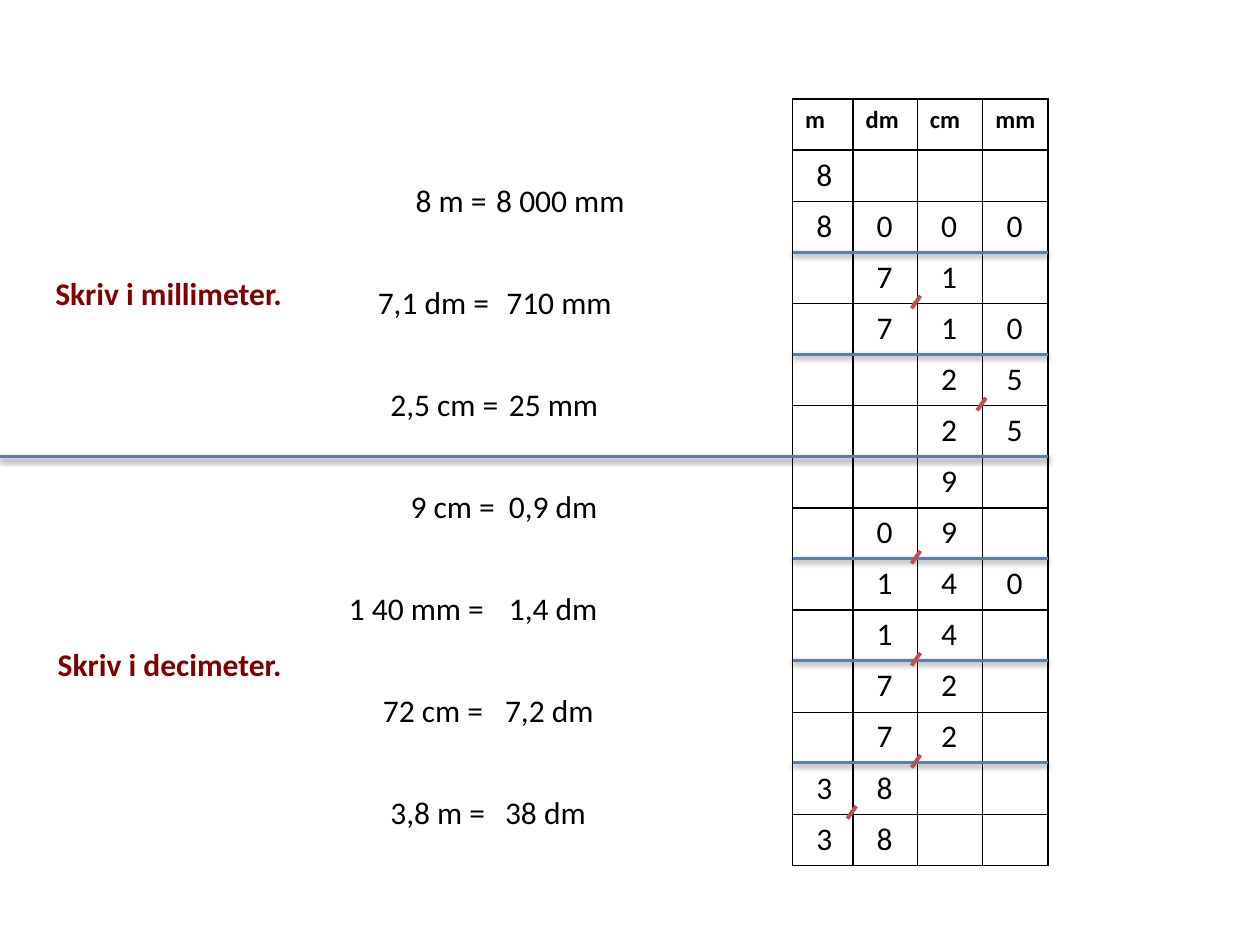
"""Build a slide on converting lengths between metres, decimetres, centimetres and millimetres."""
from dataclasses import dataclass
from itertools import accumulate

import lxml.etree
import pptx
import pptx.dml.color
import pptx.enum.shapes
import pptx.enum.text
import pptx.oxml
import pptx.oxml.ns
import pptx.util

SLIDE_WIDTH, SLIDE_HEIGHT = 10, 7.5
FONT = "Calibri"
COLORS = {"text": "000000", "label": "800000", "rule": "4F81BD", "comma": "C0504D", "paper": "FFFFFF"}

TABLE_LEFT, TABLE_TOP, ROW_HEIGHT = 0.629 * SLIDE_WIDTH, 0.105 * SLIDE_HEIGHT, 0.054 * SLIDE_HEIGHT
COLUMN_WIDTHS = [0.48, 0.51, 0.52, 0.52]
COLUMN_EDGES = list(accumulate(COLUMN_WIDTHS, initial=TABLE_LEFT))
UNITS = ["m", "dm", "cm", "mm"]
DIGIT_ROWS = [
    "8   ", "8000", " 71 ", " 710", "  25", "  25", "  9 ",
    " 09 ", " 140", " 14 ", " 72 ", " 72 ", "38  ", "38  ",
]
ROW_COUNT = len(DIGIT_ROWS) + 1
RULE_ROWS = range(3, ROW_COUNT, 2)
SECTION_ROW = 7
COMMA_CELLS = [(4, 2), (6, 3), (9, 2), (11, 2), (13, 2), (14, 1)]
COMMA_WIDTH, COMMA_HEIGHT = 0.07, 0.1
DIGIT_WIDTH, DIGIT_INSET = 0.29, 0.09
TEXT_HEIGHT = 0.4
FIRST_EQUATION_ROW, EQUATION_STEP = 1.5, 2


@dataclass
class Phrase:
    """A line of text, its left edge and width as shares of the slide width."""

    text: str
    left: float
    width: float


@dataclass
class Equation:
    """A length to convert and its answer."""

    question: Phrase
    answer: Phrase


EQUATIONS = [
    Equation(Phrase("8 m =", 0.32, 0.08), Phrase("8 000 mm", 0.384, 0.123)),
    Equation(Phrase("7,1 dm =", 0.29, 0.109), Phrase("710 mm", 0.392, 0.105)),
    Equation(Phrase("2,5 cm =", 0.3, 0.107), Phrase("25 mm", 0.394, 0.092)),
    Equation(Phrase("9 cm =", 0.316, 0.088), Phrase("0,9 dm", 0.394, 0.091)),
    Equation(Phrase("1 40 mm =", 0.267, 0.129), Phrase("1,4 dm", 0.394, 0.091)),
    Equation(Phrase("72 cm =", 0.294, 0.101), Phrase("7,2 dm", 0.391, 0.091)),
    Equation(Phrase("3,8 m =", 0.3, 0.096), Phrase("38 dm", 0.391, 0.085)),
]
LABELS = [
    (3.33, Phrase("Skriv i millimeter.", 0.034, 0.205)),
    (10.6, Phrase("Skriv i decimeter.", 0.036, 0.202)),
]


def inches(value: float) -> pptx.util.Length:
    return pptx.util.Inches(value)


def row_edge(row: float) -> float:
    return TABLE_TOP + row * ROW_HEIGHT


def rgb(name: str) -> pptx.dml.color.RGBColor:
    return pptx.dml.color.RGBColor.from_string(COLORS[name])


def add_run(paragraph, text: str, size: float, color: str = "text", bold: bool = False) -> None:
    run = paragraph.add_run()
    run.text = text
    run.font.name = FONT
    run.font.size = pptx.util.Pt(size)
    run.font.bold = bold
    run.font.color.rgb = rgb(color)


def add_text(slide, text: str, left: float, row: float, width: float,
             color: str = "text", bold: bool = False, wrap: bool = False) -> None:
    shape = slide.shapes.add_textbox(
        inches(left), inches(row_edge(row) - 0.01), inches(width), inches(TEXT_HEIGHT))
    frame = shape.text_frame
    frame.word_wrap = wrap
    frame.auto_size = pptx.enum.text.MSO_AUTO_SIZE.SHAPE_TO_FIT_TEXT
    add_run(frame.paragraphs[0], text, 18, color, bold)


def add_phrase(slide, phrase: Phrase, row: float, color: str = "text", bold: bool = False) -> None:
    add_text(slide, phrase.text, phrase.left * SLIDE_WIDTH, row, phrase.width * SLIDE_WIDTH, color, bold)


def add_line(slide, start: tuple[float, float], end: tuple[float, float],
             color: str, width: float, shadow: bool = False) -> None:
    line = slide.shapes.add_connector(
        pptx.enum.shapes.MSO_CONNECTOR.STRAIGHT, *map(inches, (*start, *end)))
    line.line.color.rgb = rgb(color)
    line.line.width = pptx.util.Pt(width)
    properties = line._element.spPr
    effects = lxml.etree.SubElement(properties, pptx.oxml.ns.qn("a:effectLst"))
    if shadow:
        effects.append(pptx.oxml.parse_xml(
            f'<a:outerShdw {pptx.oxml.ns.nsdecls("a")} blurRad="40000" dist="20000" dir="5400000" '
            'rotWithShape="0"><a:srgbClr val="000000"><a:alpha val="38000"/></a:srgbClr></a:outerShdw>'))


def format_cell(cell) -> None:
    properties = cell._tc.get_or_add_tcPr()
    for side in ("lnL", "lnR", "lnT", "lnB"):
        properties.append(pptx.oxml.parse_xml(
            f'<a:{side} {pptx.oxml.ns.nsdecls("a")} w="12700"><a:solidFill>'
            f'<a:srgbClr val="{COLORS["text"]}"/></a:solidFill></a:{side}>'))
    cell.fill.solid()
    cell.fill.fore_color.rgb = rgb("paper")


def add_unit_table(slide) -> None:
    table = slide.shapes.add_table(
        ROW_COUNT, len(UNITS), inches(TABLE_LEFT), inches(TABLE_TOP),
        inches(sum(COLUMN_WIDTHS)), inches(ROW_COUNT * ROW_HEIGHT)).table
    table.first_row = table.horz_banding = False
    for column, width in zip(table.columns, COLUMN_WIDTHS):
        column.width = inches(width)
    for row in table.rows:
        row.height = inches(ROW_HEIGHT)
    for cell in table.iter_cells():
        format_cell(cell)
    for column, unit in enumerate(UNITS):
        add_run(table.cell(0, column).text_frame.paragraphs[0], unit, 14, bold=True)


def add_rules(slide) -> None:
    for row in RULE_ROWS:
        left = 0 if row == SECTION_ROW else TABLE_LEFT
        add_line(slide, (left, row_edge(row)), (COLUMN_EDGES[-1], row_edge(row)), "rule", 2, shadow=True)


def add_commas(slide) -> None:
    for row, column in COMMA_CELLS:
        x, y = COLUMN_EDGES[column] - 0.01, row_edge(row) - 0.01
        add_line(slide, (x + COMMA_WIDTH / 2, y - COMMA_HEIGHT / 2),
                 (x - COMMA_WIDTH / 2, y + COMMA_HEIGHT / 2), "comma", 2.25)


def add_digits(slide) -> None:
    for row, digits in enumerate(DIGIT_ROWS, start=1):
        for edge, digit in zip(COLUMN_EDGES, digits):
            if digit.strip():
                add_text(slide, digit, edge + DIGIT_INSET, row, DIGIT_WIDTH, wrap=True)


def main() -> None:
    presentation = pptx.Presentation()
    presentation.slide_width = inches(SLIDE_WIDTH)
    presentation.slide_height = inches(SLIDE_HEIGHT)
    slide = presentation.slides.add_slide(presentation.slide_layouts[6])
    add_unit_table(slide)
    add_rules(slide)
    add_commas(slide)
    add_digits(slide)
    for index, equation in enumerate(EQUATIONS):
        row = FIRST_EQUATION_ROW + index * EQUATION_STEP
        add_phrase(slide, equation.question, row)
        add_phrase(slide, equation.answer, row)
    for row, phrase in LABELS:
        add_phrase(slide, phrase, row, "label", bold=True)
    presentation.save("out.pptx")


if __name__ == "__main__":
    main()
